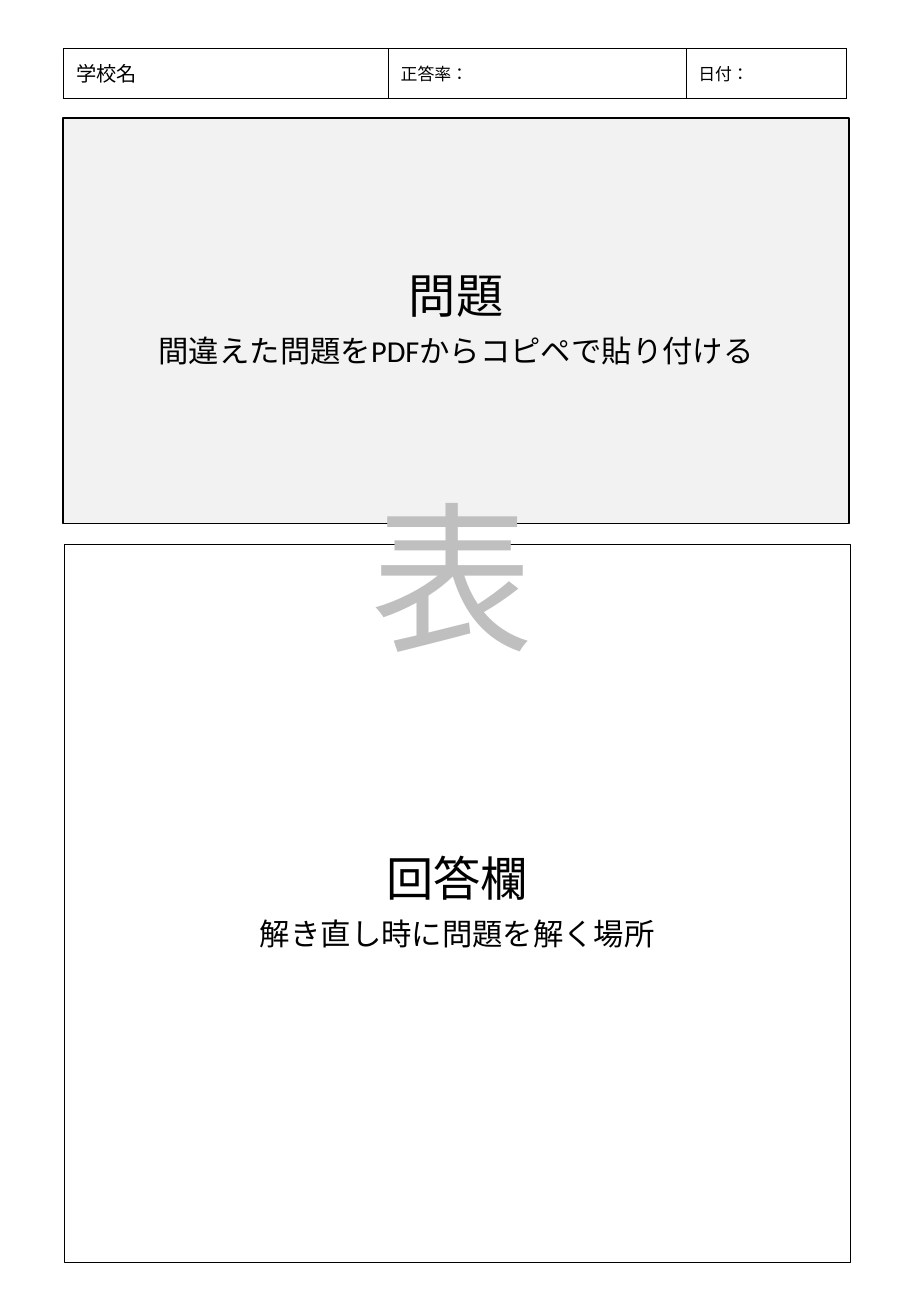
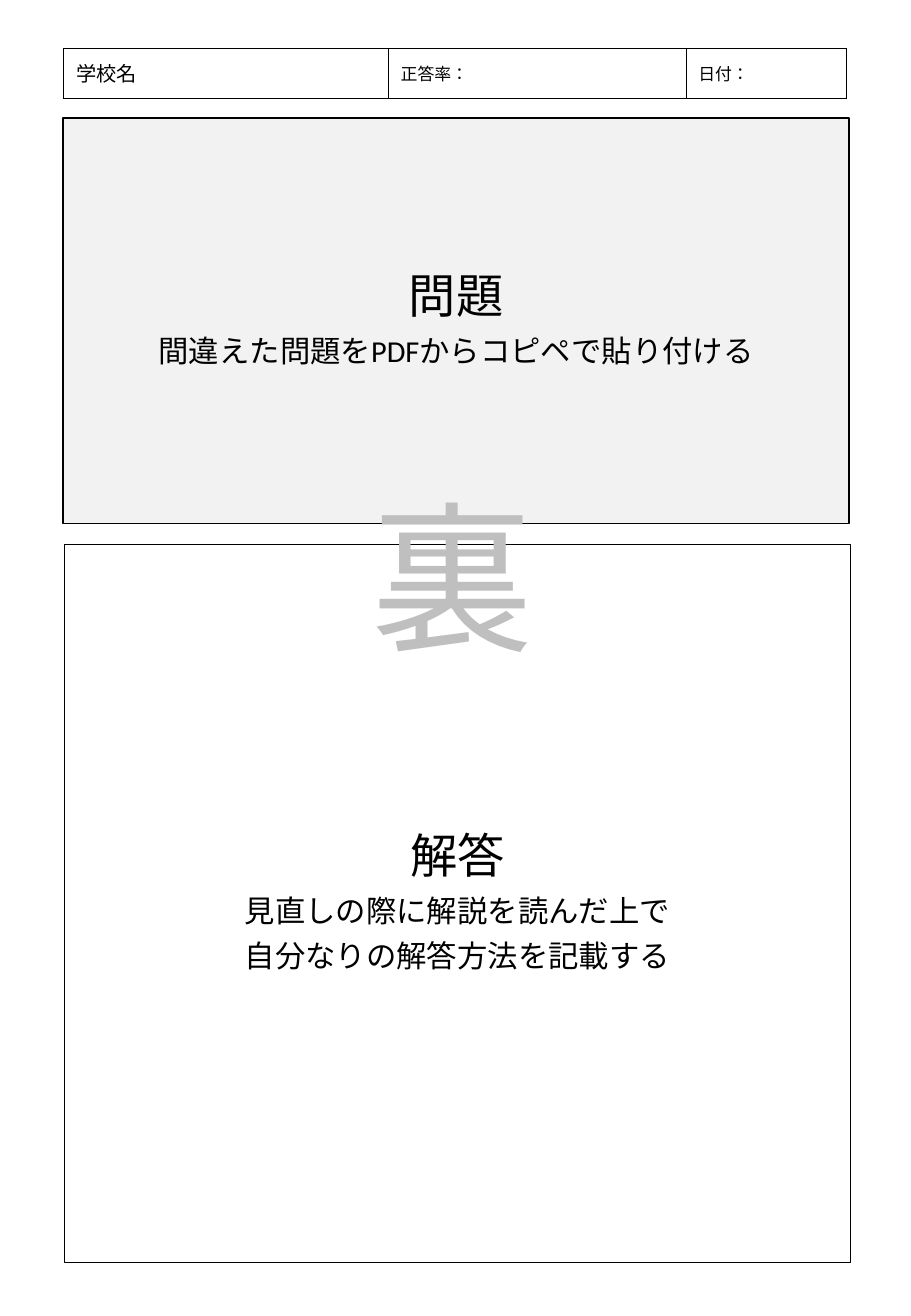
from lxml.etree import SubElement
from pptx import Presentation
from pptx.dml.color import RGBColor
from pptx.enum.lang import MSO_LANGUAGE_ID
from pptx.enum.shapes import MSO_SHAPE
from pptx.enum.text import MSO_ANCHOR, MSO_AUTO_SIZE, PP_ALIGN
from pptx.oxml.ns import qn
from pptx.util import Inches, Pt

COLORS = {"ink": "000000", "panel": "F2F2F2", "mark": "BFBFBF"}
LATIN, CJK = "Calibri", "Noto Sans CJK JP"

prs = Presentation()
prs.slide_width, prs.slide_height = Inches(7.5), Inches(10.83)


def box(x, y, w, h):
    """Turn percentages of the slide's width and height into lengths."""
    W, H = prs.slide_width, prs.slide_height
    return [int(v * side / 100) for v, side in zip((x, y, w, h), (W, H, W, H))]


def add_run(p, text, size, color="ink", font=LATIN):
    r = p.add_run()
    r.text = text
    r.font.size = Pt(size)
    r.font.name = font
    r.font.language_id = MSO_LANGUAGE_ID.JAPANESE
    r.font.color.rgb = RGBColor.from_string(COLORS[color])
    SubElement(r.font._element, qn("a:ea")).set("typeface", CJK)


HEADER = box(6.93, 3.69, 86, 3.79)
HEADER_COLS = [(35.73, ""), (32.67, "正答率："), (17.6, "日付：")]
SCHOOL = box(7.07, 4.06, 35.33, 3.32)
MARK = box(39.47, 35.83, 20.93, 15.88)
QUESTION_BOX = box(6.93, 8.96, 86.27, 30.84)
ANSWER_BOX = box(7.07, 41.37, 86.27, 54.57)

QUESTION = ["問題", "間違えた問題をPDFからコピペで貼り付ける"]
PAGES = [
    ("表", ["回答欄", "解き直し時に問題を解く場所"]),
    ("裏", ["解答", "見直しの際に解説を読んだ上で", "自分なりの解答方法を記載する"]),
]

for mark, answer in PAGES:
    s = prs.slides.add_slide(prs.slide_layouts[6])

    # Header table
    table = s.shapes.add_table(1, len(HEADER_COLS), *HEADER).table
    table.first_row = table.horz_banding = False
    for i, (width, label) in enumerate(HEADER_COLS):
        table.columns[i].width = box(0, 0, width, 0)[2]
        cell = table.cell(0, i)
        cell.vertical_anchor = MSO_ANCHOR.MIDDLE
        cell.margin_top = cell.margin_bottom = 0
        if label:
            add_run(cell.text_frame.paragraphs[0], label, 10)
        tcPr = cell._tc.get_or_add_tcPr()
        for edge in ("a:lnL", "a:lnR", "a:lnT", "a:lnB"):
            ln = SubElement(tcPr, qn(edge), w=str(Pt(0.75)))
            fill = SubElement(ln, qn("a:solidFill"))
            SubElement(fill, qn("a:srgbClr"), val=COLORS["ink"])
        cell.fill.background()

    # Question and answer panels
    for place, lines, color in ((QUESTION_BOX, QUESTION, "panel"),
                                (ANSWER_BOX, answer, None)):
        sp = s.shapes.add_shape(MSO_SHAPE.RECTANGLE, *place)
        sp.shadow.inherit = False
        if color:
            sp.fill.solid()
            sp.fill.fore_color.rgb = RGBColor.from_string(COLORS[color])
        else:
            sp.fill.background()
        sp.line.color.rgb = RGBColor.from_string(COLORS["ink"])
        sp.line.width = Pt(0.75)
        tf = sp.text_frame
        tf.word_wrap = True
        tf.vertical_anchor = MSO_ANCHOR.MIDDLE
        for i, line in enumerate(lines):
            p = tf.add_paragraph() if i else tf.paragraphs[0]
            p.alignment = PP_ALIGN.CENTER
            p.line_spacing = 0.9
            p.space_before = Pt(7.5)
            add_run(p, line, 18 if i else 28)

    # School name
    tf = s.shapes.add_textbox(*SCHOOL).text_frame
    tf.word_wrap = True
    tf.vertical_anchor = MSO_ANCHOR.MIDDLE
    p = tf.paragraphs[0]
    p.line_spacing = 0.9
    add_run(p, "学校名", 12)

    # Front or back mark
    tf = s.shapes.add_textbox(*MARK).text_frame
    tf.word_wrap = False
    tf.auto_size = MSO_AUTO_SIZE.SHAPE_TO_FIT_TEXT
    add_run(tf.paragraphs[0], mark, 96, "mark", CJK)

prs.save("out.pptx")
